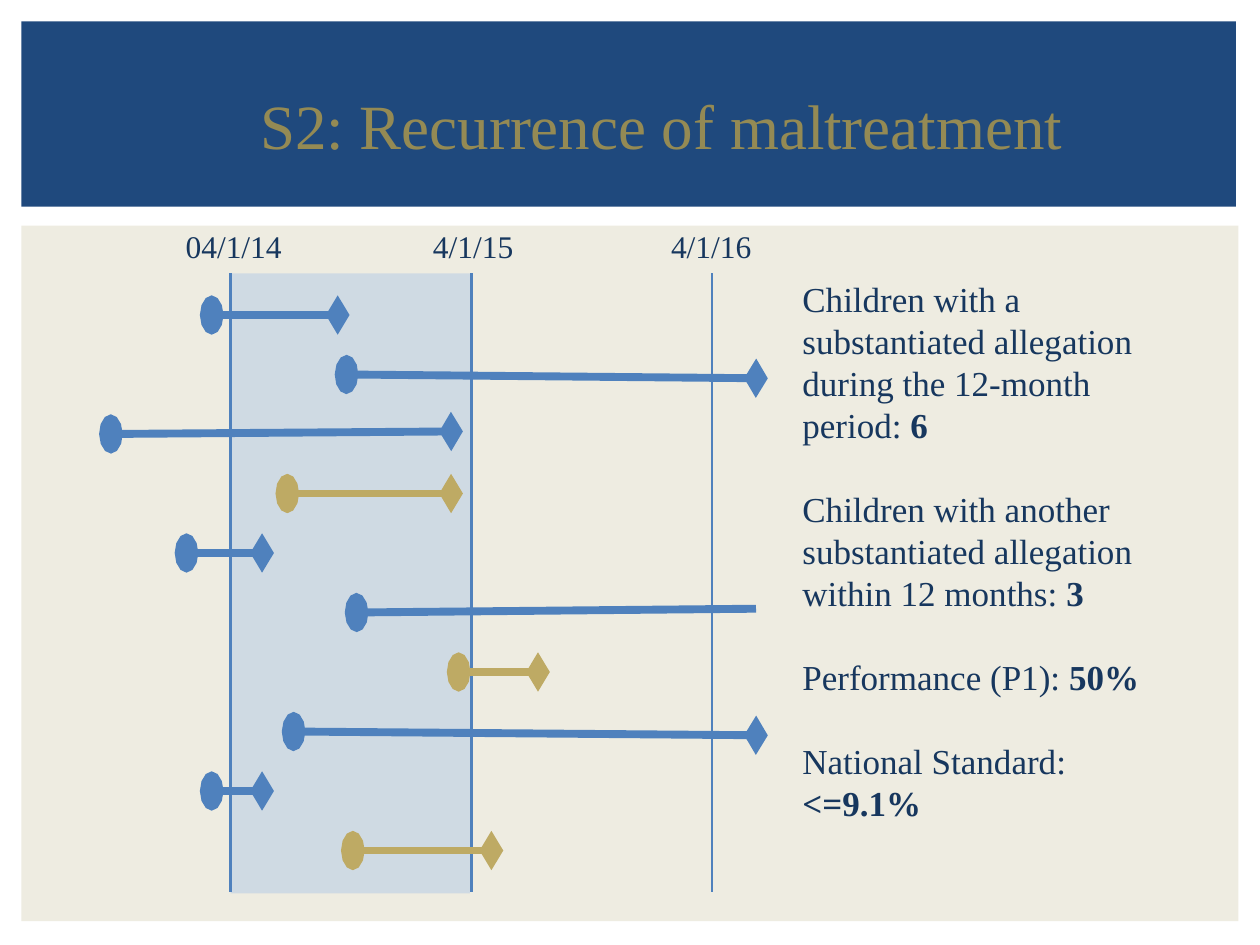
"""Build the slide on recurrence of maltreatment: case timelines beside the summary counts."""
from dataclasses import dataclass

import lxml.etree
import pptx
import pptx.dml.color
import pptx.enum.shapes
import pptx.enum.text
import pptx.oxml.ns
import pptx.util
from pptx.util import Inches


@dataclass
class Theme:
    font: str = "Times New Roman"
    navy: str = "1F497D"
    cream: str = "EEECE1"
    olive: str = "948A54"
    ink: str = "17375E"
    blue: str = "4F81BD"
    gold: str = "BEAA64"
    period: str = "B9CDE5"
    title_size: int = 36
    date_size: int = 18
    summary_size: int = 20


theme = Theme()
qn = pptx.oxml.ns.qn
rgb = pptx.dml.color.RGBColor.from_string

deck = pptx.Presentation()
deck.slide_width, deck.slide_height = Inches(10), Inches(7.5)
slide = deck.slides.add_slide(deck.slide_layouts[6])


def add_line(start, end, color, width, head=None, tail=None):
    line = slide.shapes.add_connector(
        pptx.enum.shapes.MSO_CONNECTOR.STRAIGHT, *map(Inches, start + end)
    )
    line.line.color.rgb = rgb(color)
    line.line.width = pptx.util.Pt(width)
    outline = line.line._get_or_add_ln()
    for tag, kind in (("a:headEnd", head), ("a:tailEnd", tail)):
        if kind:
            lxml.etree.SubElement(outline, qn(tag), type=kind, w="lg", len="med")
    lxml.etree.SubElement(line._element.spPr, qn("a:effectLst"))


def style_run(run, size, color, bold=False):
    run.font.name = theme.font
    run.font.size = pptx.util.Pt(size)
    run.font.color.rgb = rgb(color)
    run.font.bold = bold


panels = (
    (0.17, 1.79, 9.66, 5.52, theme.cream),
    (0.17, 0.17, 9.64, 1.47, theme.navy),
    (1.83, 2.17, 1.9, 4.92, theme.period),
)
for left, top, width, height, color in panels:
    panel = slide.shapes.add_shape(
        pptx.enum.shapes.MSO_SHAPE.RECTANGLE, *map(Inches, (left, top, width, height))
    )
    panel.shadow.inherit = False
    panel.fill.solid()
    panel.fill.fore_color.rgb = rgb(color)
    panel.line.fill.background()
    if color == theme.period:
        period_color = panel._element.spPr.find(qn("a:solidFill"))[0]
        lxml.etree.SubElement(period_color, qn("a:alpha"), val="57000")

title = slide.shapes.add_textbox(Inches(0), Inches(0.3), Inches(10), Inches(1.25)).text_frame
title.word_wrap = True
title.margin_left = Inches(0.6)
title.vertical_anchor = pptx.enum.text.MSO_ANCHOR.MIDDLE
title.text = "S2: Recurrence of maltreatment"
title.paragraphs[0].alignment = pptx.enum.text.PP_ALIGN.CENTER
title.paragraphs[0].line_spacing = 1.2
style_run(title.paragraphs[0].runs[0], theme.title_size, theme.olive)

dates = (
    ("04/1/14", 1.83, 1.37, 0.97),
    ("4/1/15", 3.74, 3.33, 0.85),
    ("4/1/16", 5.65, 5.22, 0.85),
)
for date, x, left, width in dates:
    add_line((x, 2.17), (x, 7.08), theme.blue, 1.5)
    label = slide.shapes.add_textbox(*map(Inches, (left, 1.75, width, 0.4))).text_frame
    label.word_wrap = False
    label.text = date
    label.paragraphs[0].alignment = pptx.enum.text.PP_ALIGN.CENTER
    style_run(label.paragraphs[0].runs[0], theme.date_size, theme.ink)

cases = (
    (1.68, 2.68, 0, theme.blue, "diamond"),
    (2.75, 6, 0.03, theme.blue, "diamond"),
    (0.88, 3.58, -0.02, theme.blue, "diamond"),
    (2.28, 3.58, 0, theme.gold, "diamond"),
    (1.48, 2.08, 0, theme.blue, "diamond"),
    (2.83, 6, -0.03, theme.blue, None),
    (3.64, 4.27, 0, theme.gold, "diamond"),
    (2.33, 6, 0.03, theme.blue, "diamond"),
    (1.68, 2.08, 0, theme.blue, "diamond"),
    (2.8, 3.9, 0, theme.gold, "diamond"),
)
first_case, last_case = 2.5, 6.75
case_gap = (last_case - first_case) / (len(cases) - 1)
for row, (opened, closed, drift, color, tail) in enumerate(cases):
    y = first_case + row * case_gap
    add_line((opened, y), (closed, y + drift), color, 4.5, "oval", tail)

findings = (
    ("Children with a substantiated allegation during the 12-month period: ", "6"),
    ("Children with another substantiated allegation within 12 months: ", "3"),
    ("Performance (P1): ", "50%"),
    ("National Standard: ", "<=9.1%"),
)
summary = slide.shapes.add_textbox(*map(Inches, (6.27, 2.15, 2.9, 4.48))).text_frame
summary.word_wrap = True
summary.text = "\n".join(measure for measure, value in findings)
for paragraph, (measure, value) in zip(summary.paragraphs, findings):
    paragraph.line_spacing = pptx.util.Pt(24)
    paragraph.space_after = pptx.util.Pt(24)
    style_run(paragraph.runs[0], theme.summary_size, theme.ink)
    result = paragraph.add_run()
    result.text = value
    style_run(result, theme.summary_size, theme.ink, bold=True)

deck.save("out.pptx")
